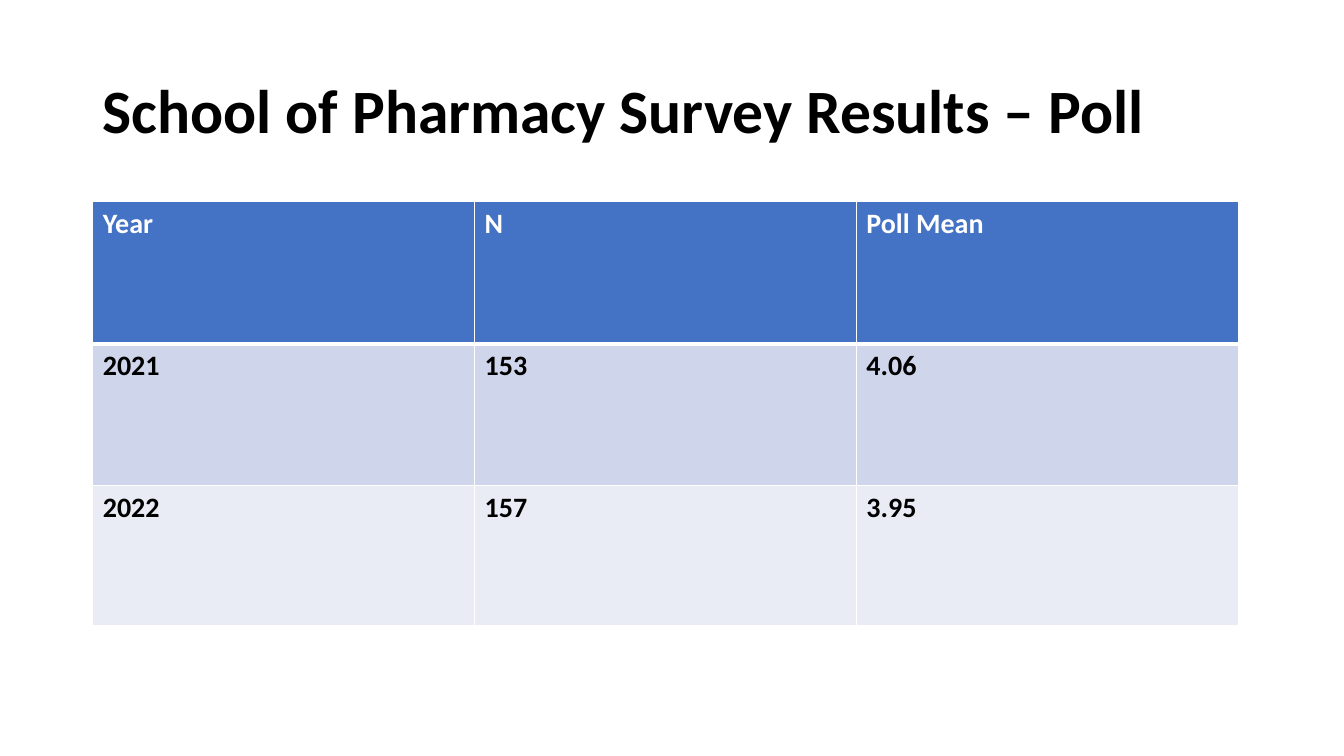
from lxml.etree import SubElement
from pptx import Presentation
from pptx.dml.color import RGBColor
from pptx.enum.text import MSO_ANCHOR, MSO_AUTO_SIZE, PP_ALIGN
from pptx.oxml.ns import qn
from pptx.util import Inches, Pt

COLORS = {
    "text": "000000",
    "white": "FFFFFF",
    "header": "4472C4",
    "odd_row": "CFD5EA",
    "even_row": "E9EBF5",
}


class ResultsSlide:
    """Holds the style and the current slide."""

    font = "Calibri"

    def __init__(self, deck):
        self.slide = deck.slides.add_slide(deck.slide_layouts[5])

    def color(self, name):
        return RGBColor.from_string(COLORS[name])

    def format_text(self, frame, size, color):
        for paragraph in frame.paragraphs:
            paragraph.alignment = PP_ALIGN.LEFT
            for run in paragraph.runs:
                run.font.name = self.font
                run.font.size = Pt(size)
                run.font.bold = True
                run.font.color.rgb = self.color(color)

    def title(self, text, left, top, width, height):
        heading = self.slide.shapes.title
        heading.left, heading.top = Inches(left), Inches(top)
        heading.width, heading.height = Inches(width), Inches(height)
        frame = heading.text_frame
        frame.text = text
        frame.word_wrap = True
        frame.auto_size = MSO_AUTO_SIZE.NONE
        frame.vertical_anchor = MSO_ANCHOR.MIDDLE
        frame.paragraphs[0].line_spacing = 0.9
        self.format_text(frame, 44, "text")

    def border(self, cell, side, width):
        line = SubElement(cell._tc.get_or_add_tcPr(), qn(f"a:{side}"), w=str(Pt(width)))
        fill = SubElement(line, qn("a:solidFill"))
        SubElement(fill, qn("a:srgbClr"), val=COLORS["white"])

    def table(self, rows, left, top, width, row_heights):
        results = self.slide.shapes.add_table(
            len(rows), len(rows[0]), Inches(left), Inches(top),
            Inches(width), Inches(sum(row_heights))).table
        for column in results.columns:
            column.width = Inches(width / len(rows[0]))
        fills = ["header", "odd_row", "even_row"]
        for r, values in enumerate(rows):
            results.rows[r].height = Inches(row_heights[r])
            # A thicker rule separates the header from the data
            borders = {"lnL": 1, "lnR": 1, "lnT": 3 if r == 1 else 1,
                       "lnB": 3 if r == 0 else 1}
            for c, value in enumerate(values):
                cell = results.cell(r, c)
                cell.text_frame.text = value
                self.format_text(cell.text_frame, 20, "text" if r else "white")
                for side, thickness in borders.items():
                    self.border(cell, side, thickness)
                cell.fill.solid()
                cell.fill.fore_color.rgb = self.color(fills[r])


def main():
    deck = Presentation()
    deck.slide_width, deck.slide_height = Inches(13.33), Inches(7.5)
    page = ResultsSlide(deck)

    # Heading
    page.title("School of Pharmacy Survey Results – Poll", 0.92, 0.4, 11.5, 1.45)

    # Results by year
    page.table(
        [["Year", "N", "Poll Mean"],
         ["2021", "153", "4.06"],
         ["2022", "157", "3.95"]],
        0.92, 2, 11.36, [1.41, 1.41, 1.39])

    deck.save("out.pptx")


if __name__ == "__main__":
    main()
